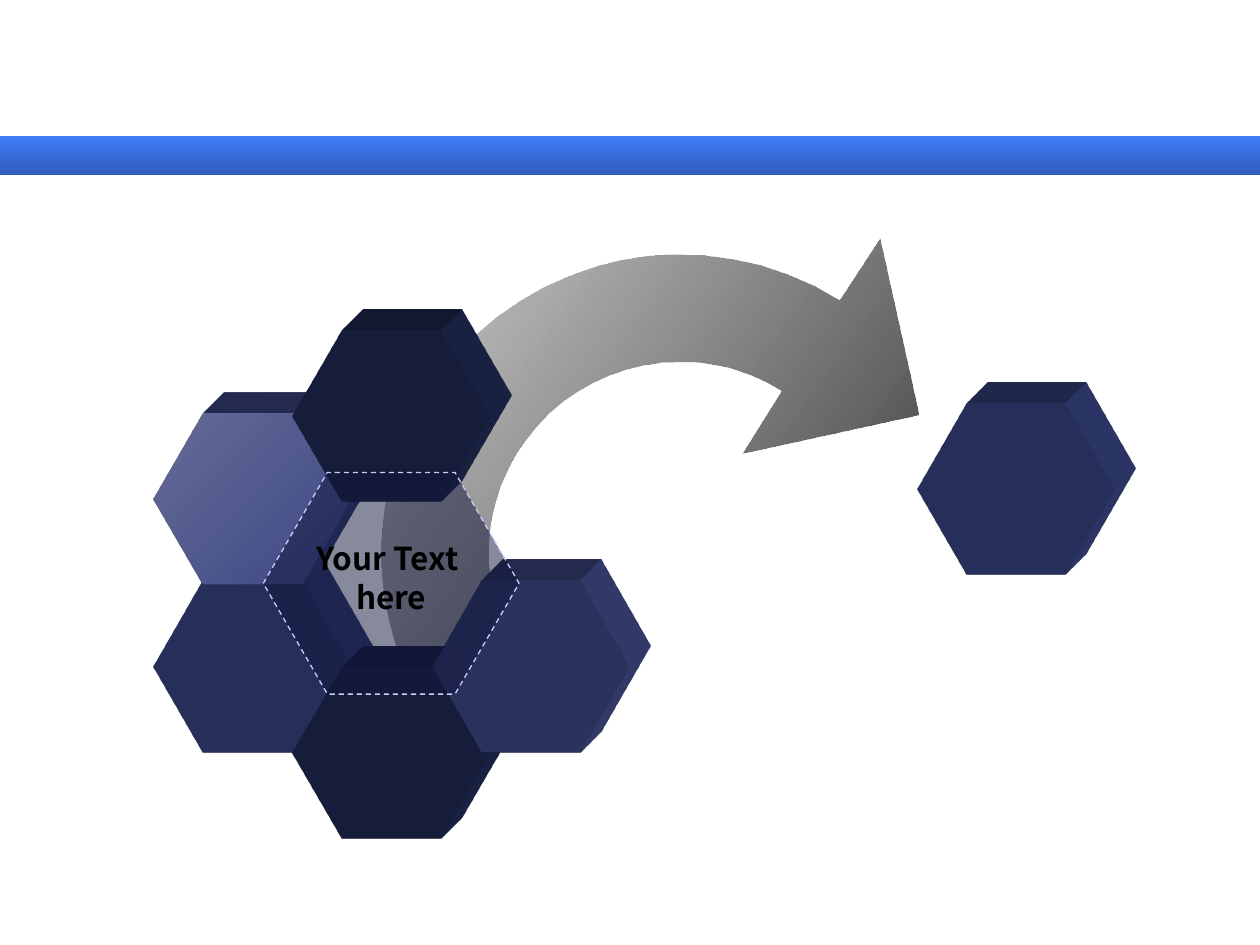
"""Build a slide with a ring of hexagons and an arrow to a separate hexagon."""
from lxml.etree import SubElement
from pptx import Presentation
from pptx.dml.color import RGBColor
from pptx.enum.dml import MSO_LINE
from pptx.enum.shapes import MSO_SHAPE
from pptx.enum.text import MSO_ANCHOR, PP_ALIGN
from pptx.oxml import parse_xml
from pptx.oxml.ns import nsdecls, qn
from pptx.util import Inches, Pt


def color(code):
    return RGBColor.from_string(code)


def paint(part, codes, angle=0):
    part.shadow.inherit = False
    part.line.fill.background()
    if len(codes) == 1:
        part.fill.solid()
        part.fill.fore_color.rgb = color(codes[0])
        return
    part.fill.gradient()
    part.fill.gradient_angle = angle
    for stop, code in zip(part.fill.gradient_stops, codes):
        stop.color.rgb = color(code)


deck = Presentation()
deck.slide_width, deck.slide_height = Inches(10), Inches(7.5)
slide = deck.slides.add_slide(deck.slide_layouts[6])
shapes = slide.shapes

for top, height, codes in [(1.08, 0.31, ["3E7CF8", "2F5DBB"]), (1.39, 6.11, ["FFFFFF"])]:
    band = shapes.add_shape(MSO_SHAPE.RECTANGLE, 0, Inches(top), Inches(10), Inches(height))
    paint(band, codes, 270)

arrow_path = [
    [(5.53, 2.68), (4.63, 2.85), (4.17, 3.5)],
    [(3.85, 3.94), (3.79, 4.52), (4.02, 5.02)],
    [(3.25, 5.38)],
    [(2.89, 4.6), (2.98, 3.7), (3.47, 3.01)],
    [(4.2, 1.99), (5.6, 1.71), (6.66, 2.38)],
    [(6.98, 1.89)], [(7.29, 3.29)], [(5.89, 3.6)],
]
outline = [(6.2, 3.1)]
steps = 16
for segment in arrow_path:
    if len(segment) == 1:
        outline += segment
        continue
    points = [outline[-1]] + segment
    for step in range(1, steps + 1):
        t = step / steps
        weights = [(1 - t) ** 3, 3 * t * (1 - t) ** 2, 3 * t ** 2 * (1 - t), t ** 3]
        outline.append(tuple(sum(w * p[axis] for w, p in zip(weights, points)) for axis in (0, 1)))
start, *rest = [(Inches(x), Inches(y)) for x, y in outline]
builder = shapes.build_freeform(*start)
builder.add_line_segments(rest, close=True)
arrow = builder.convert_to_shape()
paint(arrow, ["4D4D4D", "373737"], 324.4)
first_stop = arrow.fill._xPr.find(".//" + qn("a:srgbClr"))
SubElement(first_stop, qn("a:alpha"), val="30000")

hexagons = [
    (1.22, 4.61, ["364481"]),
    (1.22, 3.28, ["666C98", "3E4985"]),
    (2.32, 2.62, ["212B53"]),
    (2.32, 5.3, ["212B53"]),
    (3.43, 4.61, ["3E4985"]),
    (7.28, 3.2, ["364481"]),
]
for left, top, codes in hexagons:
    block = shapes.add_shape(MSO_SHAPE.HEXAGON, Inches(left), Inches(top), Inches(1.57), Inches(1.36))
    block.adjustments[0] = 0.289
    paint(block, codes, 315)
    block._element.spPr.append(parse_xml(
        f'<a:scene3d {nsdecls("a")}><a:camera prst="legacyObliqueTopRight"/>'
        '<a:lightRig rig="legacyFlat3" dir="b"/></a:scene3d>'))
    block._element.spPr.append(parse_xml(
        f'<a:sp3d {nsdecls("a")} extrusionH="430200" prstMaterial="legacyMatte">'
        '<a:bevelT w="13500" h="13500" prst="angle"/><a:bevelB w="13500" h="13500" prst="angle"/>'
        f'<a:extrusionClr><a:srgbClr val="{codes[-1]}"/></a:extrusionClr></a:sp3d>'))

center = shapes.add_shape(MSO_SHAPE.HEXAGON, Inches(2.09), Inches(3.75), Inches(2.03), Inches(1.76))
center.adjustments[0] = 0.289
paint(center, ["11163C"])
SubElement(center.fill._xPr.find(".//" + qn("a:srgbClr")), qn("a:alpha"), val="50000")
center.line.color.rgb = color("CCCCFF")
center.line.width = Pt(0.75)
center.line.dash_style = MSO_LINE.DASH

label = center.text_frame
label.text = "Your Text \nhere"
label_format = {"word_wrap": False, "vertical_anchor": MSO_ANCHOR.MIDDLE,
                "margin_top": Inches(0.05), "margin_bottom": Inches(0.15)}
line_format = {"alignment": PP_ALIGN.CENTER, "line_spacing": Pt(22)}
font_format = {"name": "Noto Sans CJK KR", "size": Pt(18), "bold": True}
targets = [(label, label_format)]
for line in label.paragraphs:
    font = line.runs[0].font
    font.color.rgb = color("000000")
    targets += [(line, line_format), (font, font_format)]
for target, values in targets:
    for key, value in values.items():
        setattr(target, key, value)

deck.save("out.pptx")
